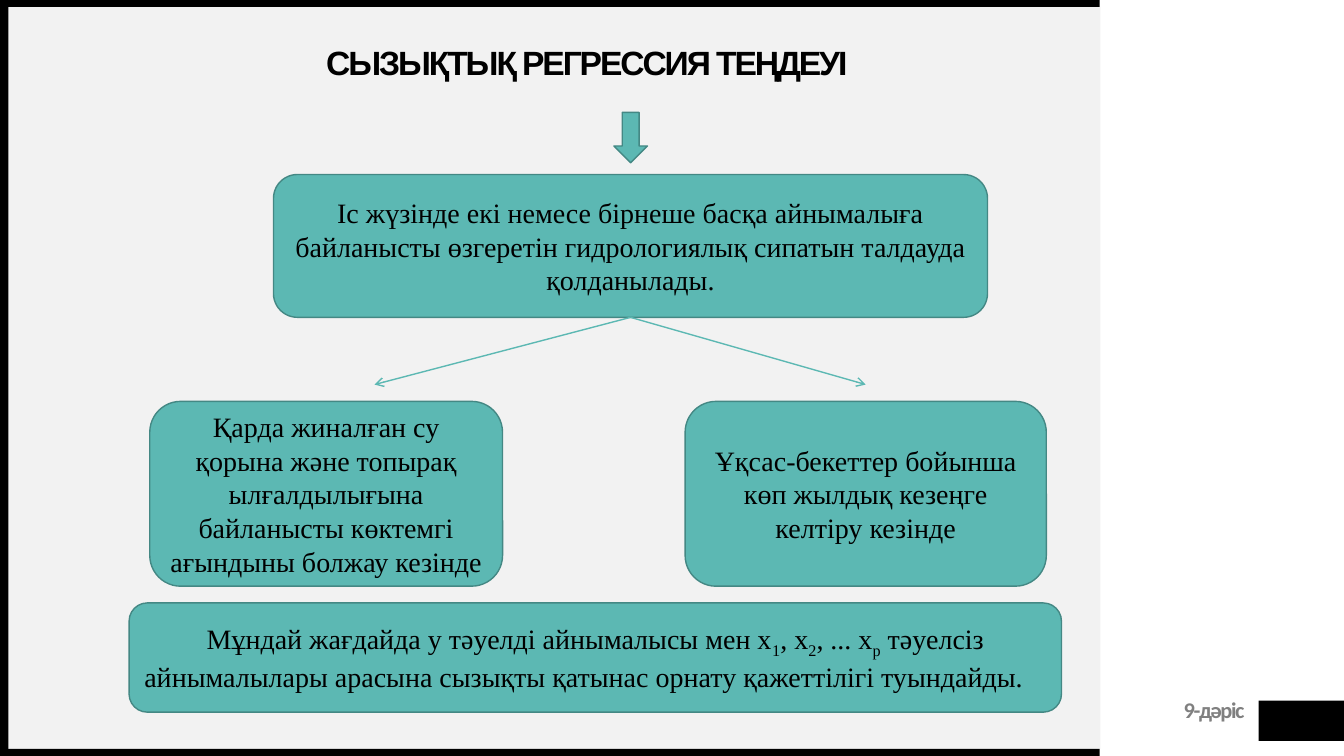
from lxml import etree
from pptx import Presentation
from pptx.dml.color import RGBColor
from pptx.enum import shapes as sh, text as tx
from pptx.oxml.ns import qn
from pptx.util import Pt

BLACK = RGBColor(0x00, 0x00, 0x00)
PANEL = RGBColor(0xF2, 0xF2, 0xF2)
GRAY = RGBColor(0x80, 0x80, 0x80)
TEAL = RGBColor(0x5C, 0xB8, 0xB3)
EDGE = RGBColor(0x44, 0x88, 0x84)
KIND = sh.MSO_SHAPE
ALIGN = tx.PP_ALIGN


def write(frame, words, font="Times New Roman", size=20, color=BLACK, bold=False,
          align=ALIGN.CENTER, space=None, line=None, inset=None,
          anchor=tx.MSO_ANCHOR.MIDDLE):
    """Fill the frame; words between underscores become subscripts."""
    frame.word_wrap = True
    frame.auto_size = tx.MSO_AUTO_SIZE.NONE
    frame.vertical_anchor = anchor
    if inset is not None:
        frame.margin_left = frame.margin_right = frame.margin_bottom = 0
        frame.margin_top = Pt(inset)
    par = frame.paragraphs[0]
    par.alignment = align
    if line:
        par.line_spacing = line
    for i, part in enumerate(words.split("_")):
        run = par.add_run()
        run.text = part
        run.font.name, run.font.size, run.font.bold = font, Pt(size), bold
        run.font.color.rgb = color
        props = run._r.get_or_add_rPr()
        if space:
            props.set("spc", str(int(space * 100)))
        if i % 2:
            props.set("baseline", "-25000")


def block(kind, place, fill, edge=None):
    shape = slide.shapes.add_shape(kind, *map(Pt, place))
    shape.shadow.inherit = False
    shape.fill.solid()
    shape.fill.fore_color.rgb = fill
    if edge:
        shape.line.color.rgb = edge
        shape.line.width = Pt(1)
    else:
        shape.line.fill.background()
    return shape


deck = Presentation()
deck.slide_width, deck.slide_height = Pt(960), Pt(540)
slide = deck.slides.add_slide(deck.slide_layouts[5])

# Frame and footer
panel = block(KIND.RECTANGLE, (5.5, 5, 780.5, 530), PANEL)
for place in [(899, 500.4, 61, 28.8), (0, 535, 785.5, 5),
              (0, 0, 785.5, 5), (0, 2.5, 6, 537.5)]:
    block(KIND.RECTANGLE, place, BLACK)
foot = slide.shapes.add_textbox(Pt(758), Pt(499.7), Pt(131), Pt(17.3))
write(foot.text_frame, "9-дәріс", font="Calibri", size=16, color=GRAY, bold=True,
      align=ALIGN.RIGHT, space=-1, line=Pt(14), inset=3, anchor=tx.MSO_ANCHOR.TOP)

# Title, raised above the panel
title = slide.shapes.title
panel.element.getparent().append(title.element)
title.left, title.top, title.width, title.height = map(Pt, (57, 29.5, 724, 34))
write(title.text_frame, "СЫЗЫҚТЫҚ РЕГРЕССИЯ ТЕҢДЕУІ", font="Arial", size=24,
      bold=True, space=-1.5, line=0.9, inset=0)

# Scheme
block(KIND.DOWN_ARROW, (438.5, 80.3, 24, 36), TEAL, EDGE)
boxes = [
    ((195.4, 124.7, 510, 102), "Іс жүзінде екі немесе бірнеше басқа айнымалыға "
     "байланысты өзгеретін гидрологиялық сипатын талдауда қолданылады."),
    ((107, 286.7, 252, 132), "Қарда жиналған су қорына және топырақ ылғалдылығына "
     "байланысты көктемгі ағындыны болжау кезінде"),
    ((489.4, 286.7, 258, 132), "Ұқсас-бекеттер бойынша көп жылдық кезеңге "
     "келтіру кезінде"),
    ((92.2, 430.7, 666, 78), "Мұндай жағдайда у тәуелді айнымалысы мен х_1_, х_2_, "
     "... х_р_ тәуелсіз айнымалылары арасына сызықты қатынас орнату қажеттілігі "
     "туындайды.\t"),
]
for place, words in boxes:
    box = block(KIND.ROUNDED_RECTANGLE, place, TEAL, EDGE)
    write(box.text_frame, words)

for end in (267.5, 618.4):
    arrow = slide.shapes.add_connector(sh.MSO_CONNECTOR.STRAIGHT, Pt(450.4), Pt(226.7),
                                       Pt(end), Pt(274.7))
    arrow.line.color.rgb = TEAL
    arrow.line.width = Pt(1)
    etree.SubElement(arrow.line._get_or_add_ln(), qn("a:tailEnd"), type="arrow")
    etree.SubElement(arrow._element.spPr, qn("a:effectLst"))

deck.save("out.pptx")
